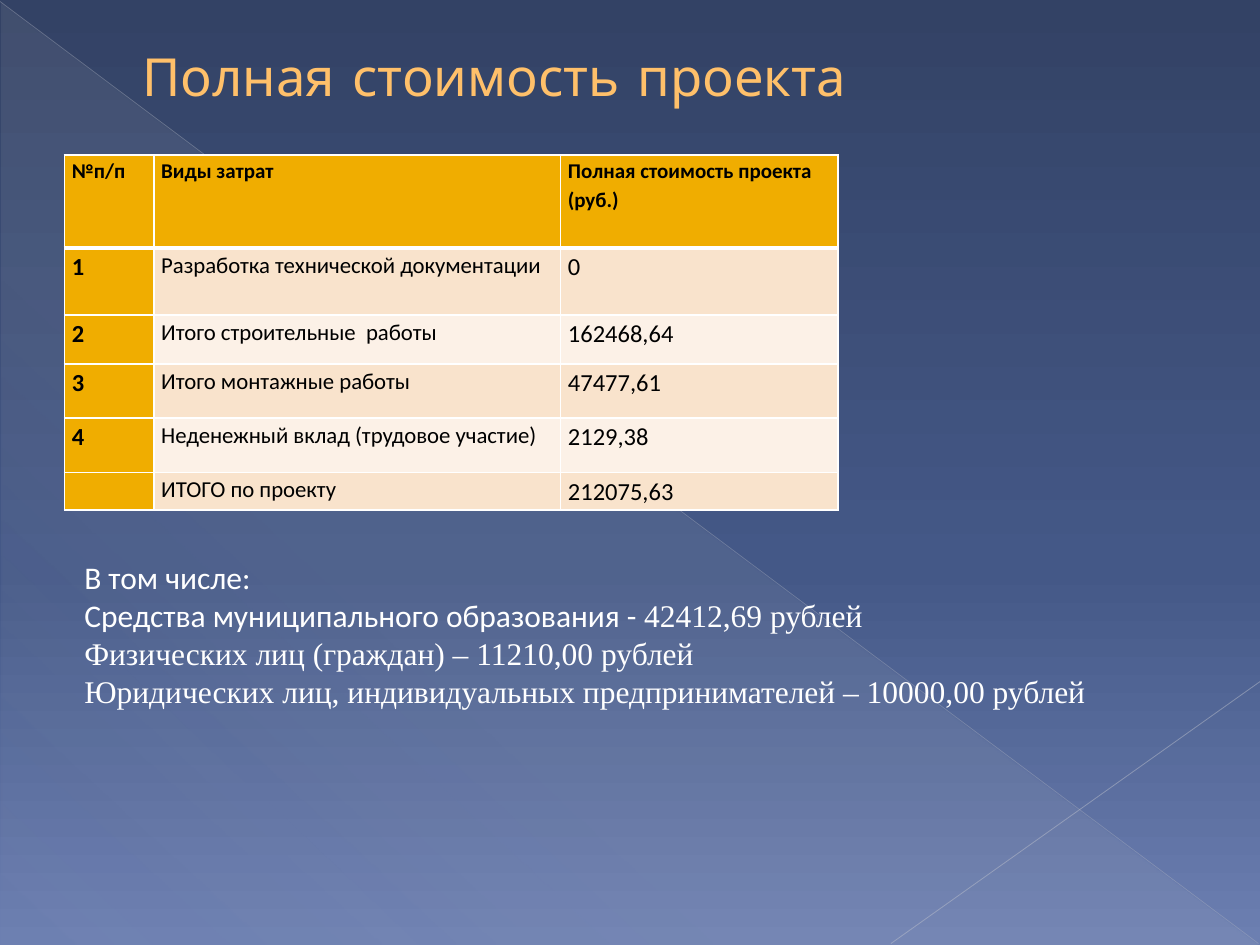
from lxml.etree import SubElement
from pptx import Presentation
from pptx.dml.color import RGBColor
from pptx.enum.shapes import MSO_CONNECTOR, MSO_SHAPE
from pptx.enum.text import MSO_ANCHOR
from pptx.oxml.ns import qn
from pptx.util import Cm, Pt

WHITE, BLACK, AMBER = "FFFFFF", "000000", "F0AD00"
BANDS = ("FCF1E7", "F9E3CC")
COLUMNS = (1.8, 8.2, 5.59)
ROW_HEIGHTS = (1.88, 1.35, 0.99, 1.09, 1.09, 0.56)
COSTS = [
    ("№п/п", "Виды затрат", "Полная стоимость проекта (руб.)"),
    ("1", "Разработка технической документации", "0"),
    ("2", "Итого строительные  работы", "162468,64"),
    ("3", "Итого монтажные работы", "47477,61"),
    ("4", "Неденежный вклад (трудовое участие)", "2129,38"),
    ("", "ИТОГО по проекту", "212075,63"),
]
SERIF = "Times New Roman"
FUNDING = [
    [("В том числе:", "Calibri")],
    [("Средства муниципального образования - ", "Calibri"), ("42412,69 рублей", SERIF)],
    [("Физических лиц (граждан) – 11210,00 рублей", SERIF)],
    [("Юридических лиц, индивидуальных предпринимателей – 10000,00 рублей", SERIF)],
]


def rgb(color):
    return RGBColor.from_string(color)


def add_color(parent, color, opacity=100):
    clr = SubElement(parent, qn("a:srgbClr"), val=color)
    if opacity < 100:
        SubElement(clr, qn("a:alpha"), val=str(opacity * 1000))


def set_gradient(fill, element, stops, angle):
    """Fill with stops of (position, colour, opacity), angle clockwise in degrees."""
    fill.gradient()
    grad = element.find(".//" + qn("a:gradFill"))
    for child in list(grad):
        grad.remove(child)
    gs_list = SubElement(grad, qn("a:gsLst"))
    for position, color, opacity in stops:
        gs = SubElement(gs_list, qn("a:gs"), pos=str(position * 1000))
        add_color(gs, color, opacity)
    SubElement(grad, qn("a:lin"), ang=str(angle * 60000), scaled="0")


def format_run(r, size, font, color, bold=False):
    r.font.size, r.font.name, r.font.bold = Pt(size), font, bold
    r.font.color.rgb = rgb(color)


def add_line(s, x1, y1, x2, y2, color, width, opacity):
    line = s.shapes.add_connector(MSO_CONNECTOR.STRAIGHT, Cm(x1), Cm(y1), Cm(x2), Cm(y2))
    line.line.width = Pt(width)
    line.line.color.rgb = rgb(color)
    clr = line.element.spPr.find(".//" + qn("a:srgbClr"))
    SubElement(clr, qn("a:alpha"), val=str(opacity * 1000))
    SubElement(line.element.spPr, qn("a:effectLst"))


def add_backdrop(s, width, height):
    set_gradient(s.background.fill, s.element,
                 [(0, "334265", 100), (60, "445887", 100), (100, "6C7FB1", 100)], 90)
    sp = s.shapes.add_shape(MSO_SHAPE.RIGHT_TRIANGLE, Cm(0.03), Cm(0.05),
                            Cm(width - 0.05), Cm(height - 0.05))
    sp.shadow.inherit = False
    sp.line.fill.background()
    set_gradient(sp.fill, sp.element,
                 [(0, "D4D4D6", 10), (70, "D4D4D6", 8), (100, "D4D4D6", 1)], 133)
    add_line(s, 0, 0.03, width - 0.03, height - 0.03, "B9BDC8", 0.39, 35)
    add_line(s, width, 13.74, 17.96, height - 0.03, "C1C4CE", 0.47, 45)


def add_title(s, x, y, w, h):
    tf = s.shapes.add_textbox(Cm(x), Cm(y), Cm(w), Cm(h)).text_frame
    tf.word_wrap = True
    tf.vertical_anchor = MSO_ANCHOR.MIDDLE
    tf.text = "Полная стоимость проекта"
    p = tf.paragraphs[0]
    p._p.get_or_add_pPr().set("marL", str(Cm(1.35)))
    r = p.runs[0]
    format_run(r, 30, "Comic Neue", "FFC06A")
    r.font._element.insert(0, outline := SubElement(r.font._element, qn("a:ln"), w=str(Pt(0.5))))
    add_color(SubElement(outline, qn("a:solidFill")), "A67800")


def set_borders(cell, **widths):
    tc_pr = cell._tc.get_or_add_tcPr()
    for side in "LRTB":
        ln = SubElement(tc_pr, qn("a:ln" + side), w=str(Pt(widths.get(side, 1))))
        add_color(SubElement(ln, qn("a:solidFill")), WHITE)


def fill_cell(cell, text, row, col):
    header = row == 0
    # The header rule is shared by the cells above and below it
    set_borders(cell, B=3 if header else 1, T=3 if row == 1 else 1)
    cell.fill.solid()
    cell.fill.fore_color.rgb = rgb(AMBER if header or col == 0 else BANDS[row % 2])
    cell.margin_left = cell.margin_right = Cm(0.15)
    cell.margin_top = cell.margin_bottom = 0
    p = cell.text_frame.paragraphs[0]
    p.line_spacing = 1.15
    r = p.add_run()
    r.text = text
    size = 12 if header else 13 if col == 1 else 14
    format_run(r, size, "Calibri", BLACK, bold=header or col == 0)


def add_cost_table(s, x, y):
    table = s.shapes.add_table(len(COSTS), len(COLUMNS), Cm(x), Cm(y),
                               Cm(sum(COLUMNS)), Cm(sum(ROW_HEIGHTS))).table
    for column, width in zip(table.columns, COLUMNS):
        column.width = Cm(width)
    for i, (height, texts) in enumerate(zip(ROW_HEIGHTS, COSTS)):
        table.rows[i].height = Cm(height)
        for j, text in enumerate(texts):
            fill_cell(table.cell(i, j), text, i, j)


def add_funding(s, x, y, w, h):
    tf = s.shapes.add_textbox(Cm(x), Cm(y), Cm(w), Cm(h)).text_frame
    tf.word_wrap = True
    for i, parts in enumerate(FUNDING):
        p = tf.add_paragraph() if i else tf.paragraphs[0]
        for text, font in parts:
            r = p.add_run()
            r.text = text
            format_run(r, 18, font, WHITE)


def main():
    prs = Presentation()
    prs.slide_width, prs.slide_height = Cm(25.4), Cm(19.05)
    s = prs.slides.add_slide(prs.slide_layouts[6])
    add_backdrop(s, 25.4, 19.05)
    add_title(s, 1.27, 0.74, 22.86, 1.57)
    add_cost_table(s, 1.3, 3.12)
    add_funding(s, 1.45, 11.13, 22.2, 4.88)
    prs.save("out.pptx")


if __name__ == "__main__":
    main()
